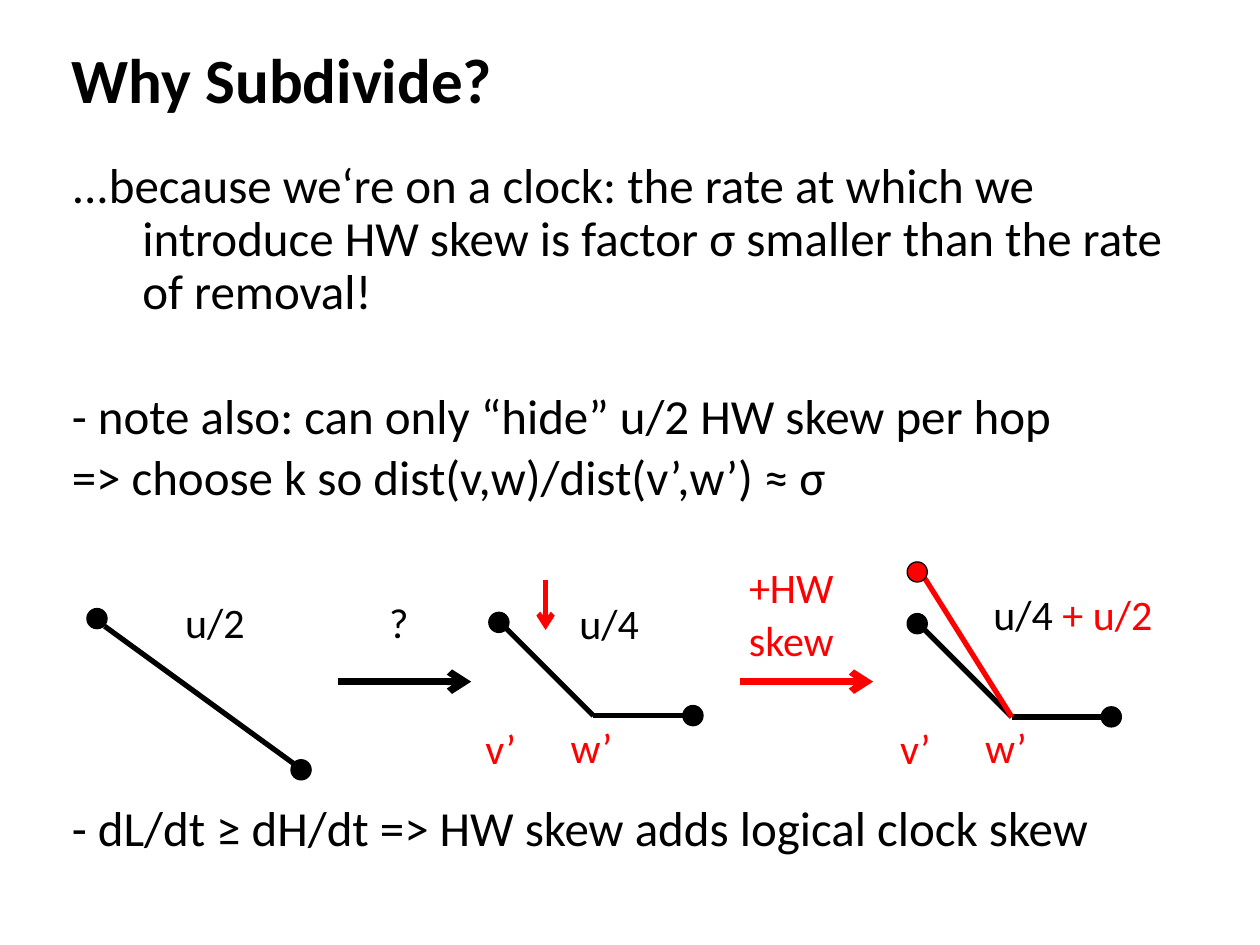
from lxml.etree import SubElement
from pptx import Presentation
from pptx.dml.color import RGBColor
from pptx.enum.shapes import MSO_CONNECTOR, MSO_SHAPE
from pptx.enum.text import MSO_ANCHOR as Anchor, MSO_AUTO_SIZE as AutoSize, PP_ALIGN as Align
from pptx.oxml.ns import qn
from pptx.util import Inches, Pt

FONT = "Calibri"
BLACK, RED = "000000", "FF0000"
DOT = 0.16
BODY = [  # text, space before in points
    ("...because we‘re on a clock: the rate at which we introduce HW skew "
     "is factor σ smaller than the rate of removal!", 5),
    ("- note also: can only “hide” u/2 HW skew per hop", 41),
    ("=> choose k so dist(v,w)/dist(v’,w’) ≈ σ", 5),
    ("- dL/dt ≥ dH/dt => HW skew adds logical clock skew", 170),
]


def rgb(color):
    return RGBColor.from_string(color)


def place(shape, left, top, width, height):
    shape.left, shape.top = Inches(left), Inches(top)
    shape.width, shape.height = Inches(width), Inches(height)


def style_run(run, size, color=BLACK, bold=False):
    run.font.name, run.font.size, run.font.bold = FONT, Pt(size), bold
    run.font.color.rgb = rgb(color)


def fill_title(title):
    place(title, 0.47, 0.25, 9.19, 0.75)
    frame = title.text_frame
    frame.text = "Why Subdivide?"
    frame.auto_size = AutoSize.NONE
    frame.vertical_anchor = Anchor.MIDDLE
    para = frame.paragraphs[0]
    para.alignment = Align.LEFT
    style_run(para.runs[0], 36, bold=True)


def fill_body(body):
    place(body, 0.47, 1.23, 8.94, 6.02)
    frame = body.text_frame
    frame.text = "\n".join(text for text, _ in BODY)
    frame.auto_size = AutoSize.NONE
    for para, (_, gap) in zip(frame.paragraphs, BODY):
        para.alignment = Align.LEFT
        para.line_spacing, para.space_before = 0.9, Pt(gap)
        properties = para._p.get_or_add_pPr()
        properties.set("marL", str(Inches(0.56)))
        properties.set("indent", str(Inches(-0.56)))
        SubElement(properties, qn("a:buNone"))
        style_run(para.runs[0], 28)


def add_line(slide, start, end, color=BLACK, width=3, arrow=False):
    points = [Inches(value) for value in (*start, *end)]
    line = slide.shapes.add_connector(MSO_CONNECTOR.STRAIGHT, *points)
    line.line.color.rgb = rgb(color)
    line.line.width = Pt(width)
    if arrow:
        SubElement(line.line._get_or_add_ln(), qn("a:tailEnd"), type="arrow")
    SubElement(line._element.spPr, qn("a:effectLst"))


def add_dot(slide, left, top, color=BLACK):
    dot = slide.shapes.add_shape(
        MSO_SHAPE.OVAL, Inches(left), Inches(top), Inches(DOT), Inches(DOT))
    dot.shadow.inherit = False
    dot.fill.solid()
    dot.fill.fore_color.rgb = rgb(color)
    dot.line.color.rgb = rgb(BLACK)
    dot.line.width = Pt(0.75)


def add_label(slide, left, top, width, *lines, height=0.46):
    """Add a centred label; each line is a list of (text, color) runs."""
    box = slide.shapes.add_textbox(
        Inches(left), Inches(top), Inches(width), Inches(height))
    frame = box.text_frame
    frame.word_wrap = True
    frame.auto_size = AutoSize.SHAPE_TO_FIT_TEXT
    for index, line in enumerate(lines):
        para = frame.add_paragraph() if index else frame.paragraphs[0]
        para.alignment = Align.CENTER
        para.line_spacing, para.space_before = 0.9, Pt(4.8)
        for text, color in line:
            run = para.add_run()
            run.text = text
            style_run(run, 24, color)


def add_bent_path(slide, left, top):
    """Add a falling edge and a level edge with dots at the outer ends."""
    bend = (left + 0.83, top + 0.82)
    add_line(slide, (left + 0.14, top + 0.13), bend)
    add_line(slide, bend, (left + 1.54, top + 0.82))
    add_dot(slide, left, top)
    add_dot(slide, left + 1.54, top + 0.74)


def main():
    deck = Presentation()
    deck.slide_width, deck.slide_height = Inches(10), Inches(7.5)
    slide = deck.slides.add_slide(deck.slide_layouts[1])
    fill_title(slide.shapes.title)
    fill_body(slide.placeholders[1])

    add_line(slide, (0.83, 4.97), (2.33, 6.06))
    add_dot(slide, 0.69, 4.83)
    add_dot(slide, 2.31, 6.03)
    add_bent_path(slide, 3.88, 4.86)
    add_bent_path(slide, 7.2, 4.87)
    add_line(slide, (7.34, 4.59), (8.03, 5.69), RED)
    add_dot(slide, 7.2, 4.46, RED)

    for left, color in ((2.68, BLACK), (5.87, RED)):
        add_line(slide, (left, 5.41), (left + 1.06, 5.41), color, 4, arrow=True)
    add_line(slide, (4.33, 4.6), (4.33, 5), RED, arrow=True)

    add_label(slide, 1.34, 4.73, 0.73, [("u/2", BLACK)])
    add_label(slide, 2.87, 4.73, 0.59, [("?", BLACK)])
    add_label(slide, 4.47, 4.74, 0.73, [("u/4", BLACK)])
    add_label(slide, 5.67, 4.45, 1.22, [("+HW", RED)], [("skew", RED)], height=0.91)
    add_label(slide, 7.54, 4.67, 1.95, [("u/4", BLACK), (" + u/2", RED)])
    for left in (3.61, 6.9):
        add_label(slide, left, 5.73, 0.73, [("v’", RED)])
        add_label(slide, left + 0.72, 5.72, 0.73, [("w’", RED)])

    deck.save("out.pptx")


if __name__ == "__main__":
    main()
